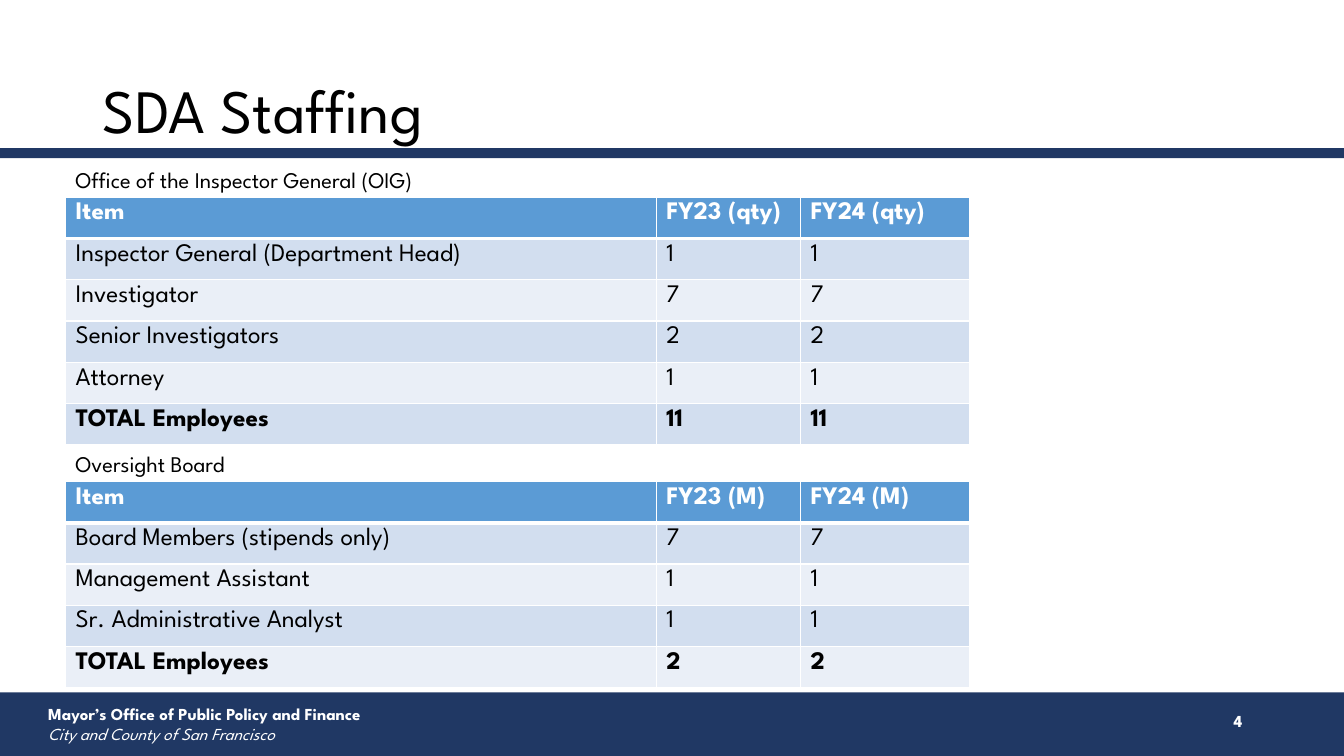
from dataclasses import dataclass

from lxml import etree
from pptx import Presentation
from pptx.dml.color import RGBColor
from pptx.enum import shapes, text
from pptx.oxml.ns import qn
from pptx.util import Inches, Pt


@dataclass(frozen=True)
class Theme:
    font: str = "League Spartan"
    navy: str = "203864"
    blue: str = "5B9BD5"
    band_dark: str = "D2DEEF"
    band_light: str = "EAEFF7"
    white: str = "FFFFFF"
    black: str = "000000"
    title_size: int = 44
    table_size: int = 18
    label_size: int = 16
    footer_size: int = 12


THEME = Theme()
SLIDE_W, SLIDE_H = 13.33, 7.5
COL_WIDTHS = (5.86, 1.43, 1.68)
ROW_H = 0.41

OIG_ROWS = [
    ("Item", "FY23 (qty)", "FY24 (qty)"),
    ("Inspector General (Department Head)", "1", "1"),
    ("Investigator", "7", "7"),
    ("Senior Investigators", "2", "2"),
    ("Attorney", "1", "1"),
    ("TOTAL Employees", "11", "11"),
]
BOARD_ROWS = [
    ("Item", "FY23 (M)", "FY24 (M)"),
    ("Board Members (stipends only)", "7", "7"),
    ("Management Assistant", "1", "1"),
    ("Sr. Administrative Analyst", "1", "1"),
    ("TOTAL Employees", "2", "2"),
]


def write(p, words, size, color=THEME.black, bold=False, italic=False, align=None):
    r = p.add_run()
    r.text = words
    r.font.name = THEME.font
    r.font.size = Pt(size)
    r.font.color.rgb = RGBColor.from_string(color)
    r.font.bold = bold
    r.font.italic = italic
    if align is not None:
        p.alignment = align


def add_text_frame(s, x, y, w, h, wrap=True, anchor=text.MSO_ANCHOR.TOP):
    tf = s.shapes.add_textbox(Inches(x), Inches(y), Inches(w), Inches(h)).text_frame
    tf.word_wrap = wrap
    tf.vertical_anchor = anchor
    return tf


def add_bar(s, y, h):
    """Draw a navy band across the full slide width."""
    sp = s.shapes.add_shape(shapes.MSO_SHAPE.RECTANGLE, 0, Inches(y),
                            Inches(SLIDE_W), Inches(h))
    sp.shadow.inherit = False
    sp.fill.solid()
    sp.fill.fore_color.rgb = RGBColor.from_string(THEME.navy)
    sp.line.fill.background()


def add_title(s, x, y, w, h):
    sp = s.shapes.title
    sp.left, sp.top, sp.width, sp.height = map(Inches, (x, y, w, h))
    tf = sp.text_frame
    tf.word_wrap = True
    tf.vertical_anchor = text.MSO_ANCHOR.MIDDLE
    p = tf.paragraphs[0]
    p.line_spacing = 0.9
    write(p, "SDA Staffing", THEME.title_size, align=text.PP_ALIGN.LEFT)


def add_footer(s, y, h):
    add_bar(s, y, h)
    tf = add_text_frame(s, 0.38, y + 0.06, 8.53, 0.4)
    write(tf.paragraphs[0], "Mayor’s Office of Public Policy and Finance",
          THEME.footer_size, THEME.white, bold=True)
    write(tf.add_paragraph(), "City and County of San Francisco",
          THEME.footer_size, THEME.white, italic=True)
    tf = add_text_frame(s, 9.42, y + 0.08, 3, 0.4, anchor=text.MSO_ANCHOR.MIDDLE)
    write(tf.paragraphs[0], "4", THEME.footer_size, THEME.white, bold=True,
          align=text.PP_ALIGN.RIGHT)


def format_cell(cell, fill, bottom_width):
    borders = {"a:lnL": 1, "a:lnR": 1, "a:lnT": 1, "a:lnB": bottom_width}
    tc_pr = cell._tc.get_or_add_tcPr()
    for tag, width in borders.items():
        ln = etree.SubElement(tc_pr, qn(tag), w=str(Pt(width)))
        solid = etree.SubElement(ln, qn("a:solidFill"))
        etree.SubElement(solid, qn("a:srgbClr"), val=THEME.white)
    cell.fill.solid()
    cell.fill.fore_color.rgb = RGBColor.from_string(fill)


def add_staffing_table(s, x, y, label, label_w, rows):
    """Place a label with its banded table below; the last row is the total."""
    tf = add_text_frame(s, x, y, label_w, 0.37, wrap=False)
    write(tf.paragraphs[0], label, THEME.label_size)

    table = s.shapes.add_table(len(rows), len(COL_WIDTHS), Inches(x), Inches(y + 0.355),
                               Inches(sum(COL_WIDTHS)), Inches(ROW_H * len(rows))).table
    for column, width in zip(table.columns, COL_WIDTHS):
        column.width = Inches(width)
    for i, values in enumerate(rows):
        table.rows[i].height = Inches(ROW_H)
        header = i == 0
        band = THEME.band_dark if i % 2 else THEME.band_light
        for j, value in enumerate(values):
            cell = table.cell(i, j)
            format_cell(cell, THEME.blue if header else band, 3 if header else 1)
            write(cell.text_frame.paragraphs[0], value, THEME.table_size,
                  THEME.white if header else THEME.black,
                  bold=header or i == len(rows) - 1)


def main():
    prs = Presentation()
    prs.slide_width, prs.slide_height = Inches(SLIDE_W), Inches(SLIDE_H)
    s = prs.slides.add_slide(prs.slide_layouts[5])
    add_footer(s, 6.87, 0.63)
    add_bar(s, 1.47, 0.1)
    add_title(s, 0.92, 0.4, 11.5, 1.45)
    add_staffing_table(s, 0.65, 1.6, "Office of the Inspector General (OIG)", 4.26, OIG_ROWS)
    add_staffing_table(s, 0.65, 4.42, "Oversight Board", 1.94, BOARD_ROWS)
    prs.save("out.pptx")


if __name__ == "__main__":
    main()
